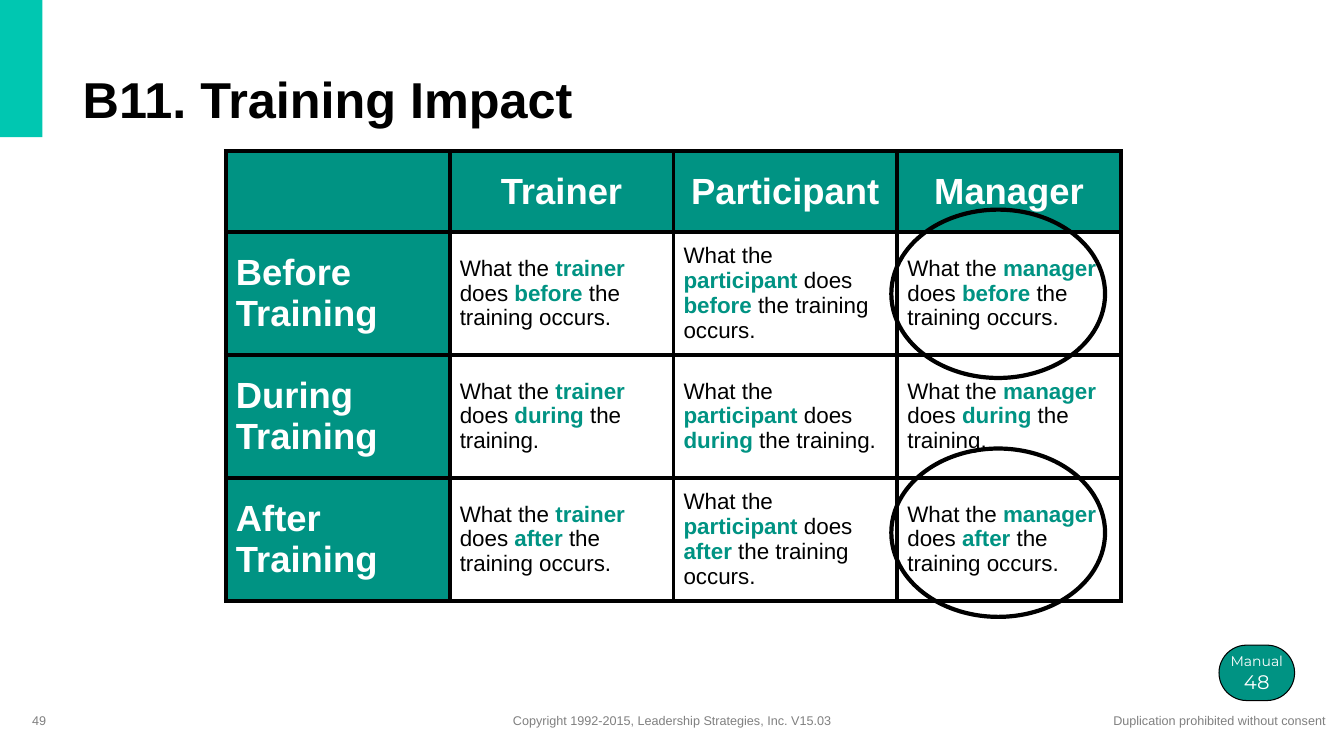
import pptx
import pptx.util
import pptx.dml.color
import pptx.enum.shapes
import pptx.enum.text
import pptx.oxml.ns
from lxml import etree

Inches, Pt = pptx.util.Inches, pptx.util.Pt
ALIGN, ANCHOR = pptx.enum.text.PP_ALIGN, pptx.enum.text.MSO_ANCHOR
SHAPE = pptx.enum.shapes.MSO_SHAPE

# Content
TITLE = "B11. Training Impact"
ROLES = ["Trainer", "Participant", "Manager"]
PHASES = [("Before", "the training occurs."),
          ("During", "the training."),
          ("After", "the training occurs.")]
FOOTERS = [  # text, left, top, width, height, alignment, wrap
    ("Duplication prohibited without consent", 10.93, 7.02, 2.33, 0.25, ALIGN.CENTER, False),
    ("Copyright 1992-2015, Leadership Strategies, Inc. V15.03", 4.97, 7.02, 3.39, 0.25,
     ALIGN.CENTER, False),
    ("49", 0.22, 6.95, 3, 0.4, ALIGN.LEFT, True),
]
COLORS = {"accent": "00C7B1", "teal": "009383", "black": "000000",
          "white": "FFFFFF", "grey": "808080"}

# Layout in inches
TABLE_LEFT, TABLE_TOP = 2.24, 1.5
COL_WIDTH, HEADER_HEIGHT, ROW_HEIGHT = 2.22, 0.8, 1.22
CIRCLE_LEFT, CIRCLE_TOPS, CIRCLE_SIZE = 8.84, (2.08, 4.45), (2.12, 1.67)


def rgb(name):
    return pptx.dml.color.RGBColor.from_string(COLORS[name])


def style(run, size, color, bold=False, font="Arial"):
    run.font.name, run.font.size, run.font.bold = font, Pt(size), bold
    run.font.color.rgb = rgb(color)


def add_shape(s, kind, left, top, width, height, fill=None, line_width=None):
    sp = s.shapes.add_shape(kind, Inches(left), Inches(top), Inches(width), Inches(height))
    sp.shadow.inherit = False
    if fill:
        sp.fill.solid()
        sp.fill.fore_color.rgb = rgb(fill)
    else:
        sp.fill.background()
    if line_width:
        sp.line.color.rgb = rgb("black")
        sp.line.width = Pt(line_width)
    else:
        sp.line.fill.background()
    return sp


def format_cell(cell, fill=None):
    tcPr = cell._tc.get_or_add_tcPr()
    for side in ("lnL", "lnR", "lnT", "lnB"):
        ln = etree.SubElement(tcPr, pptx.oxml.ns.qn("a:" + side), w=str(Pt(3)))
        solid = etree.SubElement(ln, pptx.oxml.ns.qn("a:solidFill"))
        etree.SubElement(solid, pptx.oxml.ns.qn("a:srgbClr"), val=COLORS["black"])
    cell.vertical_anchor = ANCHOR.MIDDLE
    if fill:
        cell.fill.solid()
        cell.fill.fore_color.rgb = rgb(fill)
    else:
        cell.fill.background()


def write_heading(cell, text, align):
    format_cell(cell, "teal")
    cell.text_frame.text = text
    for p in cell.text_frame.paragraphs:
        p.alignment = align
        for r in p.runs:
            style(r, 26, "white", True)


def write_sentence(cell, role, phase, ending):
    format_cell(cell)
    p = cell.text_frame.paragraphs[0]
    parts = ["What the ", role.lower(), " does ", phase.lower(), " " + ending]
    for i, part in enumerate(parts):
        r = p.add_run()
        r.text = part
        key_word = i % 2 == 1
        style(r, 16, "teal" if key_word else "black", key_word)


def main():
    prs = pptx.Presentation()
    prs.slide_width, prs.slide_height = Inches(13.33), Inches(7.5)
    s = prs.slides.add_slide(prs.slide_layouts[5])

    # Corner accent and title
    add_shape(s, SHAPE.RECTANGLE, -0.02, -0.02, 0.44, 1.38, "accent")
    title = s.shapes.title
    title.left, title.top = Inches(0.72), Inches(0.57)
    title.width, title.height = Inches(8.12), Inches(0.76)
    tf = title.text_frame
    tf.text = TITLE
    tf.vertical_anchor = ANCHOR.BOTTOM
    p = tf.paragraphs[0]
    p.alignment, p.line_spacing = ALIGN.LEFT, 0.9
    style(p.runs[0], 36, "black", True)

    # Table of roles by phase
    n_rows, n_cols = len(PHASES) + 1, len(ROLES) + 1
    table = s.shapes.add_table(
        n_rows, n_cols, Inches(TABLE_LEFT), Inches(TABLE_TOP), Inches(COL_WIDTH * n_cols),
        Inches(HEADER_HEIGHT + ROW_HEIGHT * len(PHASES))).table
    for column in table.columns:
        column.width = Inches(COL_WIDTH)
    for i, row in enumerate(table.rows):
        row.height = Inches(ROW_HEIGHT if i else HEADER_HEIGHT)
    format_cell(table.cell(0, 0), "teal")
    for c, role in enumerate(ROLES, 1):
        write_heading(table.cell(0, c), role, ALIGN.CENTER)
    for i, (phase, ending) in enumerate(PHASES, 1):
        write_heading(table.cell(i, 0), phase + "\nTraining", ALIGN.LEFT)
        for c, role in enumerate(ROLES, 1):
            write_sentence(table.cell(i, c), role, phase, ending)

    # Circles around the manager's key moments
    for top in CIRCLE_TOPS:
        add_shape(s, SHAPE.OVAL, CIRCLE_LEFT, top, *CIRCLE_SIZE, line_width=3)

    # Manual page badge
    badge = add_shape(s, SHAPE.ROUNDED_RECTANGLE, 12.09, 6.4, 0.75, 0.55, "teal", 0.75)
    badge.adjustments[0] = 0.5
    tf = badge.text_frame
    tf.word_wrap = False
    tf.vertical_anchor = ANCHOR.MIDDLE
    p = tf.paragraphs[0]
    p.text = "Manual\v48"
    p.alignment = ALIGN.CENTER
    for r, size in zip(p.runs, (10, 14)):
        style(r, size, "white", font="Montserrat")

    # Footers and page number
    for text, left, top, width, height, align, wrap in FOOTERS:
        tf = s.shapes.add_textbox(Inches(left), Inches(top),
                                  Inches(width), Inches(height)).text_frame
        tf.text = text
        tf.word_wrap = wrap
        tf.vertical_anchor = ANCHOR.MIDDLE
        tf.paragraphs[0].alignment = align
        style(tf.paragraphs[0].runs[0], 9, "grey")

    prs.save("out.pptx")


if __name__ == "__main__":
    main()
